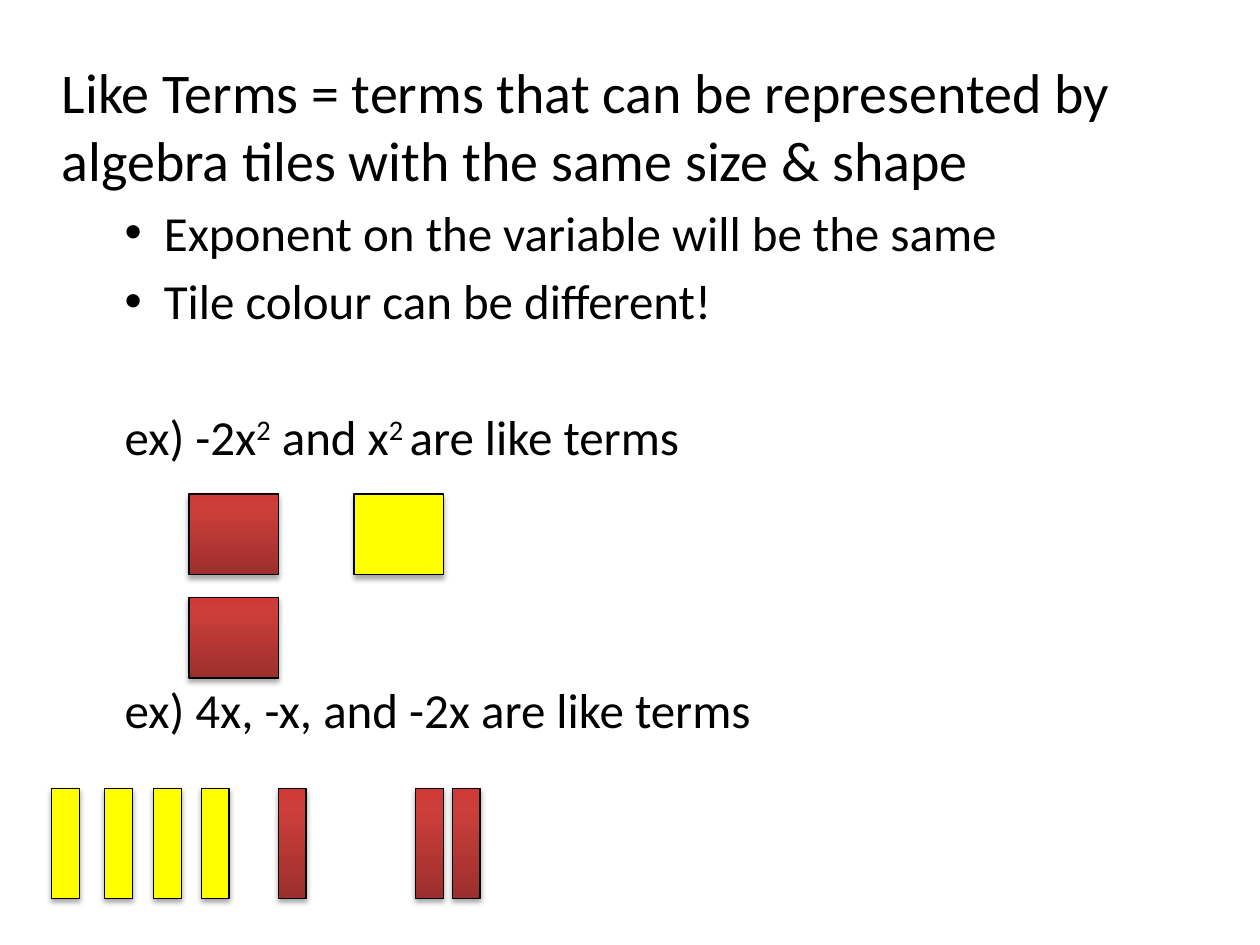
from copy import deepcopy

from lxml.etree import SubElement
from pptx import Presentation
from pptx.dml.color import RGBColor as Rgb
from pptx.enum.shapes import MSO_SHAPE as Preset
from pptx.enum.text import MSO_AUTO_SIZE as AutoSize
from pptx.oxml.ns import qn
from pptx.util import Cm, Pt

COLOURS = {
    "text": "000000",
    "outline": "000000",
    "positive": "FFFF00",
    "negative_dark": "9C2F2D",
    "negative_mid": "CB3E3A",
    "negative_light": "CE3B37",
}
SQUARE_SIZE = (1.8, 1.63)
STRIP_SIZE = (0.56, 2.21)


def colour(name):
    """Return the named palette colour."""
    return Rgb.from_string(COLOURS[name])


def write(paragraph, text, size=28, superscript=False):
    """Add a formatted run of text to a paragraph."""
    run = paragraph.add_run()
    run.text = text
    run.font.name = "Calibri"
    run.font.size = Pt(size)
    run.font.color.rgb = colour("text")
    if superscript:
        run.font._element.set("baseline", "30000")


def set_layout(paragraph, level=1, bullet=None, margin=1.27, hanging=0, gap=None):
    """Set the level, bullet, indent and space before a paragraph."""
    paragraph.level = level
    if gap is not None:
        paragraph.space_before = Pt(gap)
    properties = paragraph._p.get_or_add_pPr()
    properties.set("marL", str(Cm(margin)))
    properties.set("indent", str(-Cm(hanging)))
    if bullet:
        SubElement(properties, qn("a:buChar"), char=bullet)
    else:
        SubElement(properties, qn("a:buNone"))


def add_explanation(slide):
    """Fill the body with the definition, its two rules and the examples."""
    body = slide.placeholders[1]
    body.left, body.top, body.width, body.height = Cm(0.99), Cm(1.04), Cm(22.86), Cm(17.07)
    frame = body.text_frame
    frame.auto_size = AutoSize.NONE

    definition = frame.paragraphs[0]
    set_layout(definition, level=0, margin=0)
    write(
        definition,
        "Like Terms = terms that can be represented by algebra tiles with the same size & shape",
        size=32,
    )

    for rule in ("Exponent on the variable will be the same", "Tile colour can be different!"):
        paragraph = frame.add_paragraph()
        set_layout(paragraph, bullet="•", margin=2.06, hanging=0.79)
        write(paragraph, rule)

    squares_example = frame.add_paragraph()
    set_layout(squares_example, gap=44)
    for part in ("ex) -2x", "2 ", "and x", "2 ", "are like terms"):
        if part == "2 " and squares_example.text == "ex) -2x":
            write(squares_example, "2", superscript=True)
            write(squares_example, " ")
        else:
            write(squares_example, part, superscript=part == "2 ")

    strips_example = frame.add_paragraph()
    set_layout(strips_example, gap=122.5)
    write(strips_example, "ex) 4x, -x, and -2x are like terms")


def fill_negative(tile):
    """Give a tile the red gradient that is darkest at the bottom."""
    tile.fill.gradient()
    tile.fill.gradient_angle = 90
    first_stop = next(tile._element.spPr.iter(qn("a:gs")))
    first_stop.addnext(deepcopy(first_stop))
    shades = ((0, "negative_dark"), (0.8, "negative_mid"), (1, "negative_light"))
    for stop, (position, shade) in zip(tile.fill.gradient_stops, shades):
        stop.position = position
        stop.color.rgb = colour(shade)


def add_shadow(tile):
    """Cast a soft shadow straight down from a tile."""
    tile.shadow.inherit = False
    effects = tile._element.spPr.find(qn("a:effectLst"))
    shadow = SubElement(
        effects, qn("a:outerShdw"), blurRad=str(Pt(3.1)), dist=str(Pt(1.8)),
        dir="5400000", rotWithShape="0",
    )
    shade = SubElement(shadow, qn("a:srgbClr"), val=COLOURS["outline"])
    SubElement(shade, qn("a:alpha"), val="35000")


def add_tile(slide, left, top, size, negative=False):
    """Draw one algebra tile."""
    width, height = size
    tile = slide.shapes.add_shape(Preset.RECTANGLE, Cm(left), Cm(top), Cm(width), Cm(height))
    if negative:
        fill_negative(tile)
    else:
        tile.fill.solid()
        tile.fill.fore_color.rgb = colour("positive")
    tile.line.color.rgb = colour("outline")
    tile.line.width = Pt(0.75)
    add_shadow(tile)


def main():
    """Build the like terms slide."""
    deck = Presentation()
    deck.slide_width, deck.slide_height = Cm(25.4), Cm(19.05)
    slide = deck.slides.add_slide(deck.slide_layouts[1])
    title = slide.shapes.title._element
    title.getparent().remove(title)

    add_explanation(slide)
    for top in (9.96, 12.04):
        add_tile(slide, 3.81, top, SQUARE_SIZE, negative=True)
    add_tile(slide, 7.14, 9.96, SQUARE_SIZE)
    for left in (1.04, 2.11, 3.1, 4.06):
        add_tile(slide, left, 15.9, STRIP_SIZE)
    for left in (5.61, 8.38, 9.12):
        add_tile(slide, left, 15.9, STRIP_SIZE, negative=True)

    deck.save("out.pptx")


if __name__ == "__main__":
    main()
